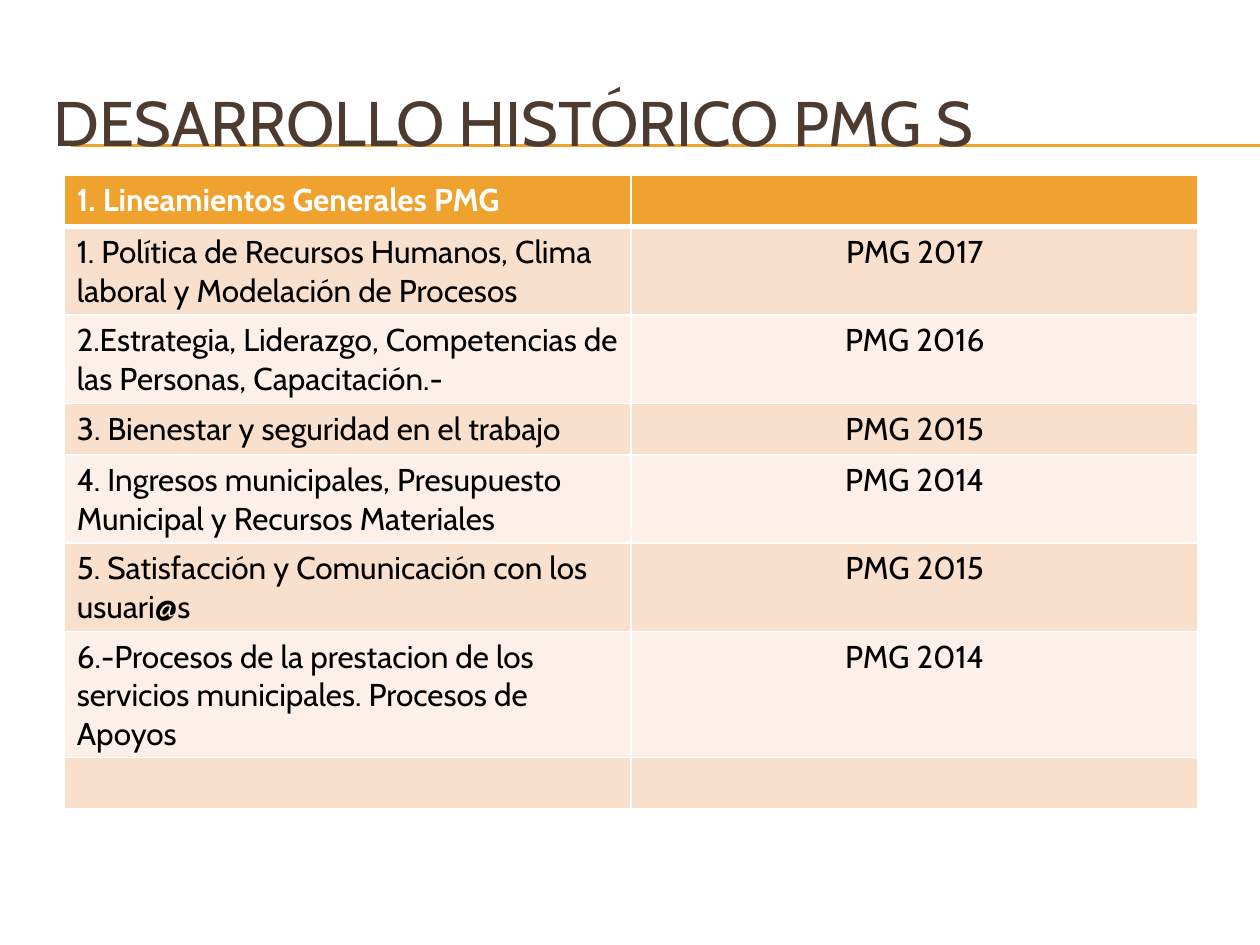
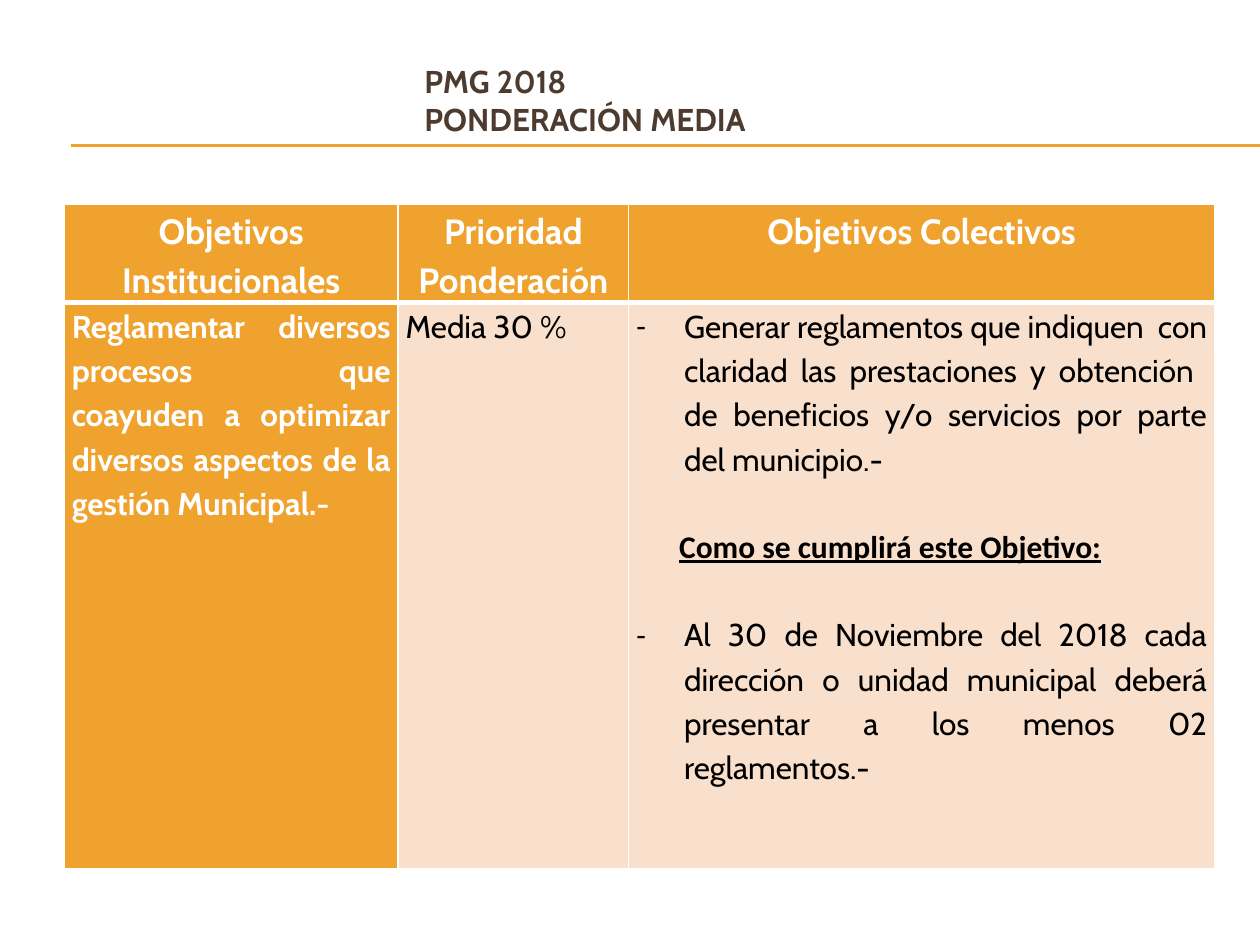
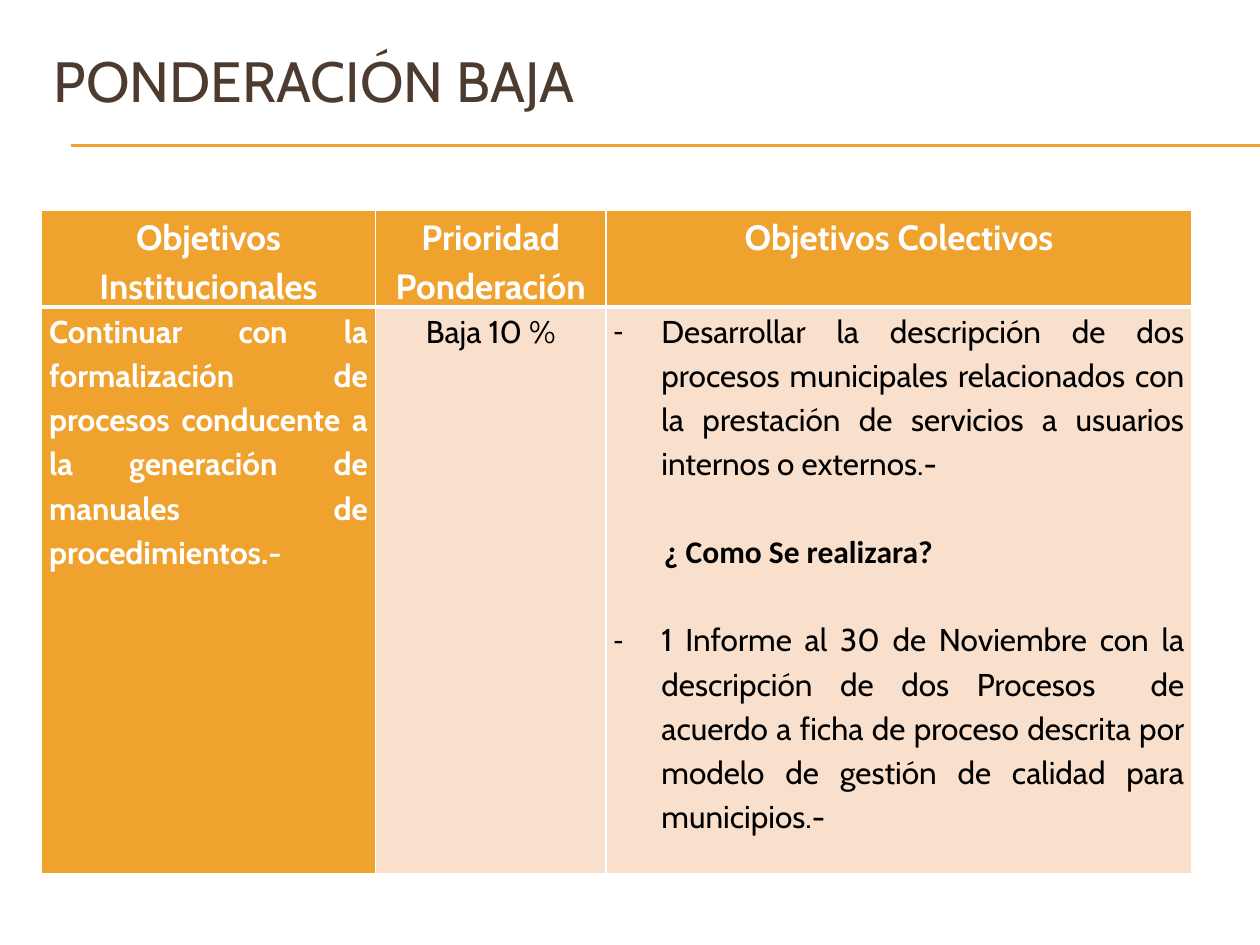
import lxml.etree
import pptx
import pptx.dml.color
import pptx.enum.shapes
import pptx.enum.text
import pptx.oxml.ns
import pptx.util

Inches = pptx.util.Inches
Pt = pptx.util.Pt
RGBColor = pptx.dml.color.RGBColor
ALIGN = pptx.enum.text.PP_ALIGN
ANCHOR = pptx.enum.text.MSO_ANCHOR
qn = pptx.oxml.ns.qn

ORANGE = RGBColor(0xF0, 0xA2, 0x2E)
BROWN = RGBColor(0x4E, 0x3B, 0x30)
PEACH = RGBColor(0xF9, 0xE0, 0xCD)
CREAM = RGBColor(0xFC, 0xF0, 0xE8)
WHITE = RGBColor(0xFF, 0xFF, 0xFF)
BLACK = RGBColor(0x00, 0x00, 0x00)

GUIDELINES = [
    ("1. Lineamientos Generales PMG", ""),
    ("1. Política de Recursos Humanos, Clima laboral y Modelación de Procesos", "PMG 2017"),
    ("2.Estrategia, Liderazgo, Competencias de las Personas, Capacitación.-", "PMG 2016"),
    ("3. Bienestar y seguridad en el trabajo", "PMG 2015"),
    ("4. Ingresos municipales, Presupuesto Municipal y Recursos Materiales", "PMG 2014"),
    ("5. Satisfacción y Comunicación con los usuari@s", "PMG 2015"),
    ("6.-Procesos de la prestacion de los servicios municipales. Procesos de Apoyos", "PMG 2014"),
    ("", ""),
]
OBJECTIVE_HEADERS = ["Objetivos Institucionales", "Prioridad Ponderación", "Objetivos Colectivos"]


def write_text(frame, text, size=18, color=BLACK, bold=False, underline=False, font="Cabin",
               align=ALIGN.LEFT, line_spacing=None, gap=0, indent=0, bullet=None):
    """Add one formatted paragraph, filling the first one while it is empty."""
    first = frame.paragraphs[0]
    paragraph = frame.add_paragraph() if first.runs else first
    paragraph.text = text
    paragraph.alignment = align
    paragraph.line_spacing = line_spacing
    paragraph.space_before = paragraph.space_after = Pt(gap)
    for run in paragraph.runs:
        run.font.name = font
        run.font.size = Pt(size)
        run.font.bold = bold
        run.font.underline = underline
        run.font.color.rgb = color
    properties = paragraph._p.get_or_add_pPr()
    properties.set("marL", str(Inches(indent)))
    properties.set("indent", str(-Inches(indent) if bullet else 0))
    if bullet:
        lxml.etree.SubElement(properties, qn("a:buFont")).set("typeface", "Calibri")
        lxml.etree.SubElement(properties, qn("a:buChar")).set("char", bullet)


class Deck:
    """Holds the shared style and the slide being built."""

    def __init__(self):
        self.presentation = pptx.Presentation()
        self.presentation.slide_width = Inches(10)
        self.presentation.slide_height = Inches(7.5)
        self.slide = None

    def add_slide(self):
        """Start a blank slide with the double rule under its title."""
        self.slide = self.presentation.slides.add_slide(self.presentation.slide_layouts[6])
        for height in (1.15, 1.16):
            self.add_rule(height)

    def add_rule(self, height):
        """Draw a thin orange line out to the right edge."""
        connector = self.slide.shapes.add_connector(
            pptx.enum.shapes.MSO_CONNECTOR.STRAIGHT,
            Inches(0.56), Inches(height), Inches(10), Inches(height))
        connector.line.color.rgb = ORANGE
        connector.line.width = Pt(0.75)
        lxml.etree.SubElement(connector._element.spPr, qn("a:effectLst"))

    def add_title(self, text, left, top, width, height, anchor=ANCHOR.MIDDLE, **text_format):
        """Add the brown slide title."""
        shape = self.slide.shapes.add_textbox(Inches(left), Inches(top), Inches(width), Inches(height))
        frame = shape.text_frame
        frame.word_wrap = True
        frame.vertical_anchor = anchor
        if anchor == ANCHOR.TOP:
            frame.margin_top = 0
        write_text(frame, text, color=BROWN, **text_format)

    def add_table(self, left, top, widths, heights):
        """Add a table with the given column widths and row heights."""
        table = self.slide.shapes.add_table(
            len(heights), len(widths), Inches(left), Inches(top),
            Inches(sum(widths)), Inches(sum(heights))).table
        table.first_row = table.horz_banding = False
        for column, width in zip(table.columns, widths):
            column.width = Inches(width)
        for row, height in zip(table.rows, heights):
            row.height = Inches(height)
        return table

    def style_cell(self, table, row, column, fill):
        """Fill a cell, border it in white and return its text frame."""
        cell = table.cell(row, column)
        properties = cell._tc.get_or_add_tcPr()
        widths = {"lnL": 1, "lnR": 1, "lnT": 3 if row == 1 else 1, "lnB": 3 if row == 0 else 1}
        for side, width in widths.items():
            border = lxml.etree.SubElement(properties, qn(f"a:{side}"), w=str(Pt(width)))
            solid = lxml.etree.SubElement(border, qn("a:solidFill"))
            lxml.etree.SubElement(solid, qn("a:srgbClr"), val=str(WHITE))
        cell.fill.solid()
        cell.fill.fore_color.rgb = fill
        return cell.text_frame

    def add_guidelines(self):
        """Add the banded table of guidelines and years."""
        table = self.add_table(0.51, 1.39, [4.5, 4.5], [0.41] * len(GUIDELINES))
        for row, texts in enumerate(GUIDELINES):
            header = row == 0
            fill = ORANGE if header else PEACH if row % 2 else CREAM
            for column, text in enumerate(texts):
                frame = self.style_cell(table, row, column, fill)
                write_text(frame, text, bold=header, color=WHITE if header else BLACK,
                           align=ALIGN.CENTER if column else ALIGN.LEFT)

    def add_objectives(self, left, top, institutional, priority, goal, question, answer,
                       priority_align=ALIGN.JUSTIFY, question_indent=0.34, underline=False):
        """Add the table of institutional and collective objectives."""
        table = self.add_table(left, top, [2.65, 1.83, 4.65], [0.61, 4.5])
        frames = []
        for row in range(2):
            for column in range(3):
                cell = table.cell(row, column)
                cell.margin_left = cell.margin_right = Inches(0.06)
                cell.margin_top = cell.margin_bottom = 0
                fill = PEACH if row and column else ORANGE
                frames.append(self.style_cell(table, row, column, fill))
        for frame, text in zip(frames, OBJECTIVE_HEADERS):
            write_text(frame, text, size=20, color=WHITE, bold=True,
                       align=ALIGN.CENTER, line_spacing=1.15)
        body = {"align": ALIGN.JUSTIFY, "line_spacing": 1.15}
        institutional_frame, priority_frame, collective_frame = frames[3:]
        write_text(institutional_frame, institutional, color=WHITE, bold=True, **body)
        write_text(priority_frame, priority, align=priority_align, line_spacing=1.15)
        write_text(collective_frame, goal, indent=0.38, bullet="-", **body)
        write_text(collective_frame, question, font="Calibri", bold=True, underline=underline,
                   indent=question_indent, gap=25, **body)
        write_text(collective_frame, answer, indent=0.38, bullet="-", **body)


def main():
    """Build the three slides and save them."""
    deck = Deck()

    deck.add_slide()
    deck.add_title("DESARROLLO HISTÓRICO PMG S", 0.33, 0.5, 9.5, 0.92, size=36)
    deck.add_guidelines()

    deck.add_slide()
    deck.add_objectives(
        0.51, 1.62,
        institutional="Reglamentar diversos procesos  que coayuden a optimizar diversos "
                      "aspectos de la gestión Municipal.-",
        priority="Media 30 %",
        goal="Generar reglamentos que indiquen  con claridad las prestaciones y obtención  "
             "de beneficios y/o servicios por parte del municipio.-",
        question="Como se cumplirá este Objetivo:",
        answer="Al 30 de Noviembre del 2018 cada dirección o unidad municipal deberá "
               "presentar a los menos 02 reglamentos.-",
        underline=True)
    deck.add_title("PMG 2018\nPONDERACIÓN MEDIA", 3.27, 0.44, 3.62, 0.71, bold=True)

    deck.add_slide()
    deck.add_title("PONDERACIÓN BAJA", 0.33, 0.36, 9.33, 1.02, anchor=ANCHOR.TOP, size=32.4)
    deck.add_objectives(
        0.33, 1.67,
        institutional="Continuar con la formalización de procesos conducente a la "
                      "generación de manuales de procedimientos.-",
        priority="Baja 10 %",
        goal="Desarrollar la descripción de dos procesos municipales relacionados con la "
             "prestación de servicios a usuarios internos o externos.-",
        question="¿ Como Se realizara?",
        answer="1 Informe al 30 de Noviembre con la descripción de dos Procesos  de acuerdo "
               "a ficha de proceso descrita por modelo de gestión de calidad para municipios.-",
        priority_align=ALIGN.CENTER, question_indent=0.4)

    deck.presentation.save("out.pptx")


if __name__ == "__main__":
    main()
